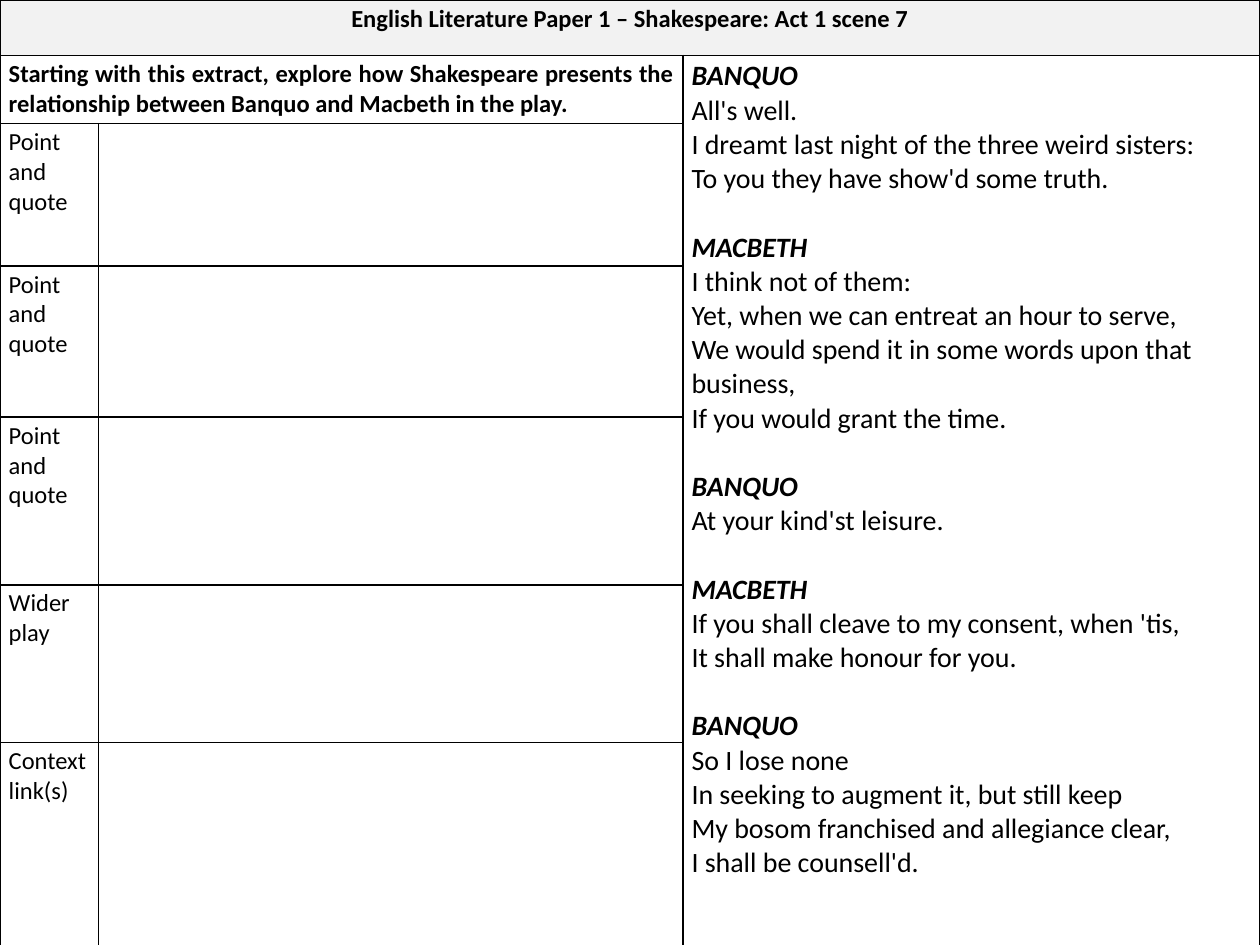
from lxml.etree import SubElement
from pptx import Presentation
from pptx.dml.color import RGBColor
from pptx.enum.text import PP_ALIGN
from pptx.oxml.ns import qn
from pptx.util import Pt

COLORS = {"ink": "000000", "header": "F2F2F2", "paper": "FFFFFF"}
FONT = "Calibri"
LINE_HEIGHT = 1.22

COL_WIDTHS = [56.2, 334, 329.8]
ROW_HEIGHTS = [31.7, 38.9, 81.4, 86.4, 95.8, 90, 119.5]

TITLE = "English Literature Paper 1 – Shakespeare: Act 1 scene 7"
QUESTION = ("Starting with this extract, explore how Shakespeare presents "
            "the relationship between Banquo and Macbeth in the play.")
PROMPTS = ["Point and quote"] * 3 + ["Wider play", "Context link(s)"]
SPEECHES = [
    ("BANQUO", ["All's well.",
                "I dreamt last night of the three weird sisters:",
                "To you they have show'd some truth."]),
    ("MACBETH", ["I think not of them:",
                 "Yet, when we can entreat an hour to serve,",
                 "We would spend it in some words upon that business,",
                 "If you would grant the time."]),
    ("BANQUO", ["At your kind'st leisure."]),
    ("MACBETH", ["If you shall cleave to my consent, when 'tis,",
                 "It shall make honour for you."]),
    ("BANQUO", ["So I lose none",
                "In seeking to augment it, but still keep",
                "My bosom franchised and allegiance clear,",
                "I shall be counsell'd."]),
]


def rgb(name):
    return RGBColor.from_string(COLORS[name])


def style_cell(cell, fill="paper"):
    """Set the margins, black rules and fill of a cell."""
    cell.margin_left = cell.margin_right = Pt(5)
    cell.margin_top = cell.margin_bottom = Pt(2.2)
    tcPr = cell._tc.get_or_add_tcPr()
    for side in ("lnL", "lnR", "lnT", "lnB"):
        ln = SubElement(tcPr, qn(f"a:{side}"), w=str(Pt(1)))
        solid = SubElement(ln, qn("a:solidFill"))
        SubElement(solid, qn("a:srgbClr"), val=COLORS["ink"])
    cell.fill.solid()
    cell.fill.fore_color.rgb = rgb(fill)


def write(p, text, size=14, bold=False, italic=False, align=PP_ALIGN.LEFT):
    p.text = text
    p.alignment = align
    font = p.runs[0].font
    font.name, font.size = FONT, Pt(size)
    font.bold, font.italic = bold, italic
    font.color.rgb = rgb("ink")


def fill_extract(cell, size=16):
    """Write the speeches, with one line of space between them."""
    tf = cell.text_frame
    p = tf.paragraphs[0]
    for i, (speaker, lines) in enumerate(SPEECHES):
        if i:
            p = tf.add_paragraph()
            p.space_before = Pt(round(size * LINE_HEIGHT, 1))
        write(p, speaker, size, bold=True, italic=True)
        for line in lines:
            write(tf.add_paragraph(), line, size)


def add_worksheet(slide, left, top, width, height):
    table = slide.shapes.add_table(
        len(ROW_HEIGHTS), len(COL_WIDTHS),
        Pt(left), Pt(top), Pt(width), Pt(height)).table
    table.first_row = table.horz_banding = False
    for column, w in zip(table.columns, COL_WIDTHS):
        column.width = Pt(w)
    for i, (row, h) in enumerate(zip(table.rows, ROW_HEIGHTS)):
        row.height = Pt(h)
        for cell in row.cells:
            style_cell(cell, "paper" if i else "header")

    title, question, extract = (table.cell(0, 0), table.cell(1, 0),
                                table.cell(1, 2))
    title.merge(table.cell(0, 2))
    question.merge(table.cell(1, 1))
    extract.merge(table.cell(len(ROW_HEIGHTS) - 1, 2))

    write(title.text_frame.paragraphs[0], TITLE, bold=True,
          align=PP_ALIGN.CENTER)
    write(question.text_frame.paragraphs[0], QUESTION, bold=True,
          align=PP_ALIGN.JUSTIFY)
    for i, prompt in enumerate(PROMPTS, start=2):
        write(table.cell(i, 0).text_frame.paragraphs[0], prompt)
    fill_extract(extract)


def main():
    prs = Presentation()
    prs.slide_width, prs.slide_height = Pt(720), Pt(540)
    slide = prs.slides.add_slide(prs.slide_layouts[6])
    add_worksheet(slide, 0, 0, sum(COL_WIDTHS), sum(ROW_HEIGHTS))
    prs.save("out.pptx")


if __name__ == "__main__":
    main()
